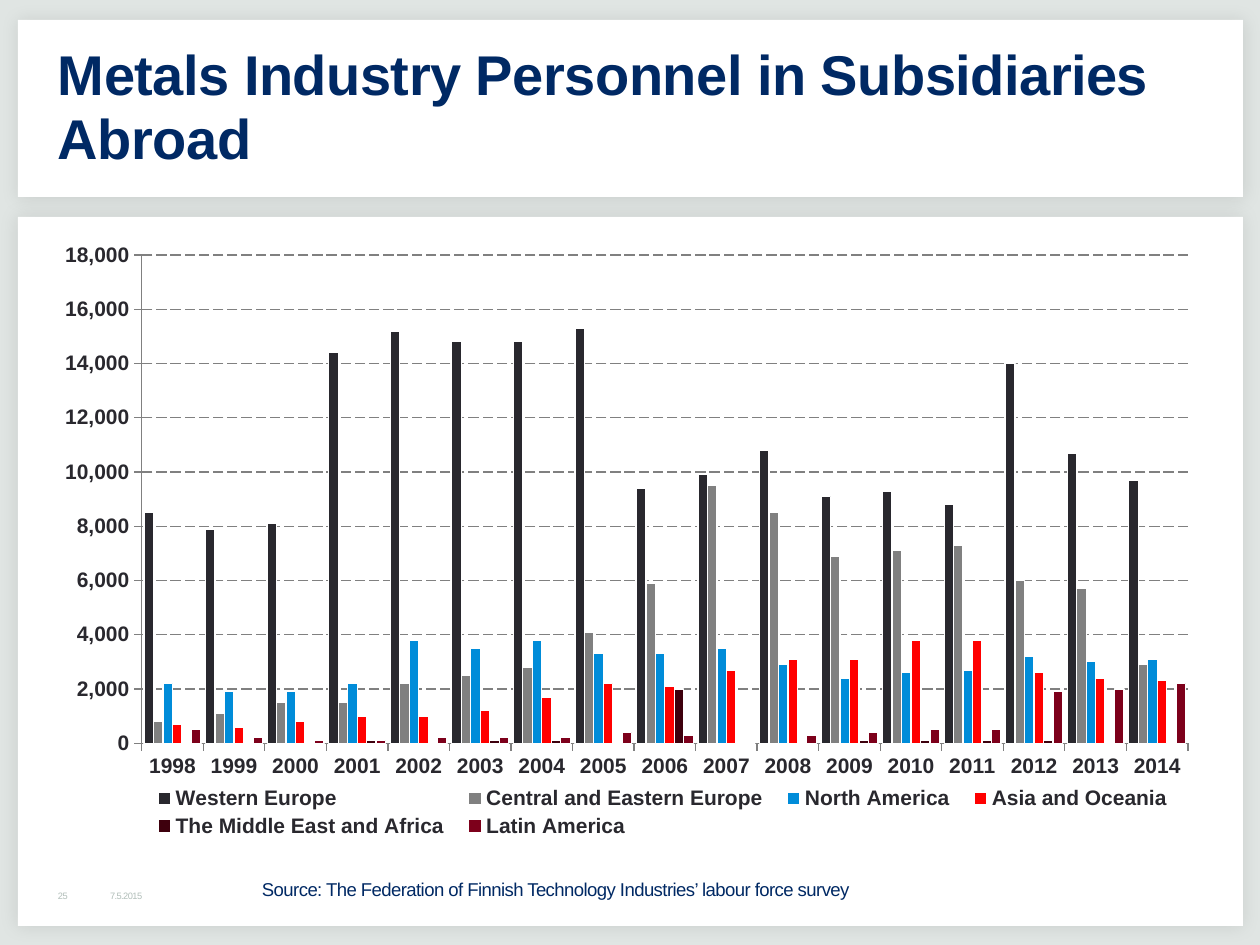
from dataclasses import dataclass

from lxml import etree
from pptx import Presentation
from pptx import util as u
from pptx.chart.data import CategoryChartData
from pptx.dml.color import RGBColor
from pptx.enum import chart as charts, dml, shapes, text
from pptx.oxml import parse_xml
from pptx.oxml.ns import nsdecls, qn

PX_PER_INCH = 126
FONT = "Arial"
COLORS = {
    "background": "E0E5E3", "panel": "FFFFFF", "navy": "002964",
    "footer": "B1BEB9", "ink": "29282E", "grid": "808080",
}


@dataclass(frozen=True)
class Box:
    left: int
    top: int
    width: int
    height: int

    def emu(self) -> tuple:
        return tuple(px(v) for v in (self.left, self.top, self.width, self.height))


@dataclass(frozen=True)
class Label:
    box: Box
    content: str
    size: float
    color: str
    inset: int
    anchor: text.MSO_ANCHOR


@dataclass(frozen=True)
class Region:
    name: str
    color: str
    personnel: tuple


def px(length: int) -> int:
    return round(length * 914400 / PX_PER_INCH)


def rgb(name: str) -> RGBColor:
    return RGBColor.from_string(COLORS.get(name, name))


PANELS = [Box(18, 20, 1225, 177), Box(18, 217, 1225, 709)]
TITLE_BOX = Box(53, 39, 1155, 138)
CHART_BOX = Box(35, 238, 1173, 611)
LABELS = [
    Label(Box(105, 886, 157, 20), "7.5.2015", 5.3, "footer", 5, text.MSO_ANCHOR.MIDDLE),
    Label(Box(53, 886, 52, 20), "25", 5.3, "footer", 5, text.MSO_ANCHOR.MIDDLE),
    Label(Box(258, 874, 743, 32),
          "Source: The Federation of Finnish Technology Industries’ labour force survey",
          10.6, "navy", 4, text.MSO_ANCHOR.TOP),
]
YEARS = [str(year) for year in range(1998, 2015)]
REGIONS = [
    Region("Western Europe", "29282E",
           (8500, 7900, 8100, 14400, 15200, 14800, 14800, 15300, 9400,
            9900, 10800, 9100, 9300, 8800, 14000, 10700, 9700)),
    Region("Central and Eastern Europe", "808080",
           (800, 1100, 1500, 1500, 2200, 2500, 2800, 4100, 5900,
            9500, 8500, 6900, 7100, 7300, 6000, 5700, 2900)),
    Region("North America", "008CD9",
           (2200, 1900, 1900, 2200, 3800, 3500, 3800, 3300, 3300,
            3500, 2900, 2400, 2600, 2700, 3200, 3000, 3100)),
    Region("Asia and Oceania", "FF0000",
           (700, 600, 800, 1000, 1000, 1200, 1700, 2200, 2100,
            2700, 3100, 3100, 3800, 3800, 2600, 2400, 2300)),
    Region("The Middle East and Africa", "3E000D",
           (0, 0, 0, 100, 0, 100, 100, 0, 2000, 0, 0, 100, 100, 100, 100, 0, 0)),
    Region("Latin America", "7D001B",
           (500, 200, 100, 100, 200, 200, 200, 400, 300,
            0, 300, 400, 500, 500, 1900, 2000, 2200)),
]


def add_panel(slide, box: Box) -> None:
    shape = slide.shapes.add_shape(shapes.MSO_SHAPE.RECTANGLE, *box.emu())
    shape.fill.solid()
    shape.fill.fore_color.rgb = rgb("panel")
    shape.line.fill.background()
    # Soft glow-like shadow around the panel
    shape._element.spPr.append(parse_xml(
        f'<a:effectLst {nsdecls("a")}><a:outerShdw blurRad="127000" dist="0" '
        'algn="ctr" rotWithShape="0"><a:srgbClr val="000000">'
        '<a:alpha val="10000"/></a:srgbClr></a:outerShdw></a:effectLst>'))


def format_run(run, size: float, color: str, bold: bool = False) -> None:
    run.font.name = FONT
    run.font.size = u.Pt(size)
    run.font.bold = bold
    run.font.color.rgb = rgb(color)
    run._r.get_or_add_rPr().set("spc", "-30")


def add_label(slide, label: Label) -> None:
    frame = slide.shapes.add_textbox(*label.box.emu()).text_frame
    frame.word_wrap = True
    frame.vertical_anchor = label.anchor
    frame.margin_left = frame.margin_right = px(label.inset)
    frame.margin_top = frame.margin_bottom = px(label.inset)
    frame.text = label.content
    format_run(frame.paragraphs[0].runs[0], label.size, label.color)


def format_title(slide) -> None:
    title = slide.shapes.title
    slide.shapes._spTree.append(title._element)  # in front of the panels
    title.left, title.top, title.width, title.height = TITLE_BOX.emu()
    frame = title.text_frame
    frame.text = "Metals Industry Personnel in Subsidiaries Abroad"
    frame.word_wrap = True
    frame.auto_size = text.MSO_AUTO_SIZE.NONE
    frame.vertical_anchor = text.MSO_ANCHOR.MIDDLE
    frame.margin_left, frame.margin_right = px(5), px(13)
    frame.margin_top = frame.margin_bottom = px(6)
    paragraph = frame.paragraphs[0]
    paragraph.alignment = text.PP_ALIGN.LEFT
    paragraph.line_spacing = 0.95
    format_run(paragraph.runs[0], 32, "navy", True)


def manual_layout(x: float, y: float, w: float, h: float, inner: bool = False):
    layout = parse_xml(f'<c:layout {nsdecls("c")}><c:manualLayout/></c:layout>')
    values = {"layoutTarget": "inner"} if inner else {}
    values.update(xMode="edge", yMode="edge", x=x, y=y, w=w, h=h)
    for tag, value in values.items():
        etree.SubElement(layout[0], qn(f"c:{tag}")).set("val", str(value))
    return layout


def format_font(font) -> None:
    font.name = FONT
    font.size = u.Pt(12)
    font.bold = True
    font.color.rgb = rgb("ink")


def format_line(line, color: str) -> None:
    line.color.rgb = rgb(color)
    line.width = u.Pt(0.75)


def add_personnel_chart(slide) -> None:
    data = CategoryChartData(number_format="#,##0")
    data.categories = YEARS
    for region in REGIONS:
        data.add_series(region.name, region.personnel)
    chart = slide.shapes.add_chart(
        charts.XL_CHART_TYPE.COLUMN_CLUSTERED, *CHART_BOX.emu(), data).chart
    chart.has_title = False
    format_font(chart.font)

    # Columns
    plot = chart.plots[0]
    plot.gap_width, plot.overlap = 50, 0
    plot.vary_by_categories = False
    for series, region in zip(plot.series, REGIONS):
        series.format.fill.solid()
        series.format.fill.fore_color.rgb = rgb(region.color)
        format_line(series.format.line, "panel")

    # Axes and gridlines
    for axis in (chart.category_axis, chart.value_axis):
        axis.major_tick_mark = charts.XL_TICK_MARK.OUTSIDE
        format_line(axis.format.line, "grid")
        format_font(axis.tick_labels.font)
    axis = chart.value_axis
    axis.minimum_scale, axis.maximum_scale, axis.major_unit = 0, 18000, 2000
    axis.tick_labels.number_format = "#,##0"
    axis.tick_labels.number_format_is_linked = False
    gridline = axis.major_gridlines.format.line
    format_line(gridline, "grid")
    gridline.dash_style = dml.MSO_LINE.LONG_DASH

    # Legend and plot placement
    chart.has_legend = True
    legend = chart.legend
    legend.position = charts.XL_LEGEND_POSITION.BOTTOM
    legend.include_in_layout = False
    format_font(legend.font)
    plot_area = chart._chartSpace.chart.plotArea
    for parent in (plot_area, legend._element):
        for layout in parent.findall(qn("c:layout")):
            parent.remove(layout)
    plot_area.insert(0, manual_layout(0.091, 0.028, 0.892, 0.799, True))
    legend._element.find(qn("c:legendPos")).addnext(manual_layout(0.09, 0.89, 0.89, 0.1))


def main() -> None:
    presentation = Presentation()
    presentation.slide_width, presentation.slide_height = px(1260), px(945)
    slide = presentation.slides.add_slide(presentation.slide_layouts[5])
    slide.background.fill.solid()
    slide.background.fill.fore_color.rgb = rgb("background")
    for panel in PANELS:
        add_panel(slide, panel)
    format_title(slide)
    add_personnel_chart(slide)
    for label in LABELS:
        add_label(slide, label)
    presentation.save("out.pptx")


if __name__ == "__main__":
    main()
